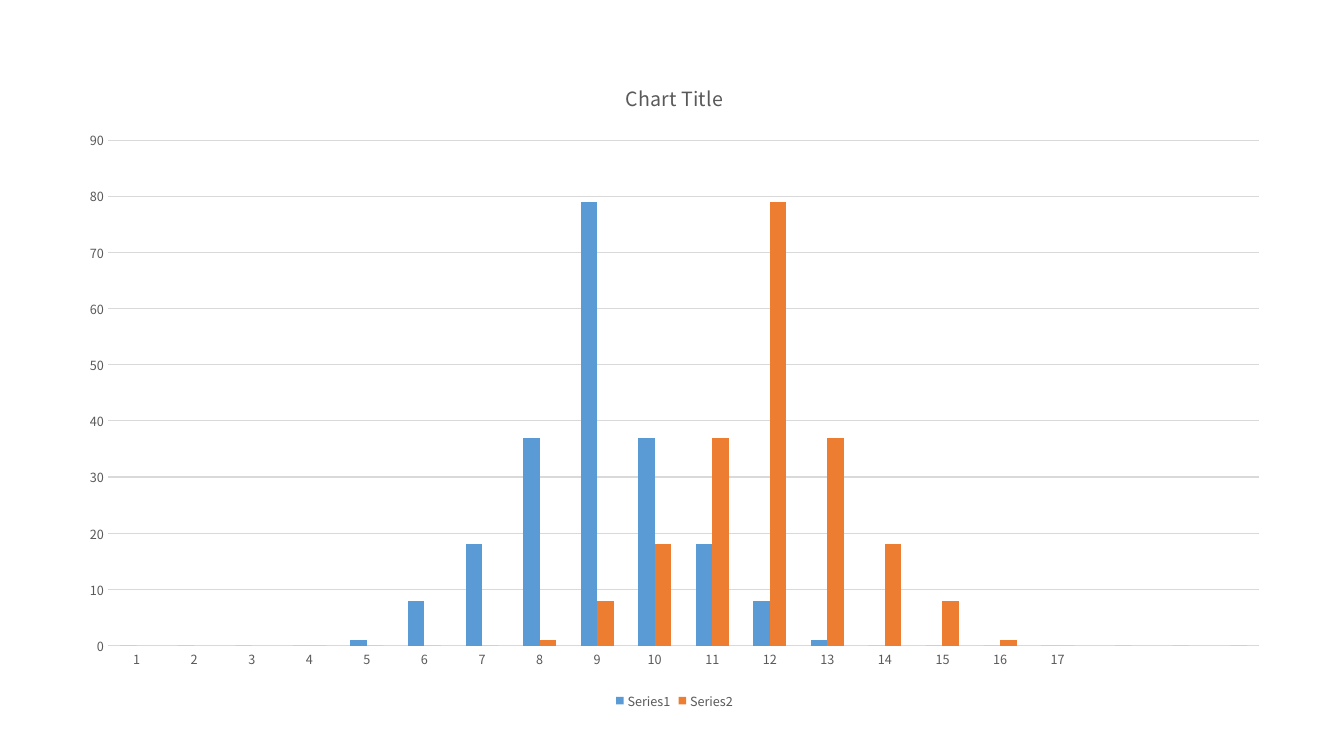
from dataclasses import dataclass

from pptx import Presentation
from pptx.chart.chart import Chart
from pptx.chart.data import CategoryChartData
from pptx.dml.color import RGBColor
from pptx.enum.chart import XL_CHART_TYPE, XL_LEGEND_POSITION, XL_TICK_MARK
from pptx.text.text import Font
from pptx.util import Inches, Pt

BLUE = RGBColor(0x5B, 0x9B, 0xD5)
ORANGE = RGBColor(0xED, 0x7D, 0x31)
TEXT_GRAY = RGBColor(0x59, 0x59, 0x59)
GRID_GRAY = RGBColor(0xD9, 0xD9, 0xD9)
FONT_NAME = "Noto Sans CJK JP"
BELL = (0, 0, 0, 0, 1, 8, 18, 37, 79, 37, 18, 8, 1, 0, 0, 0, 0)
CATEGORY_COUNT = 20


@dataclass(frozen=True)
class BarSeries:
    name: str
    color: RGBColor
    shift: int

    def values(self) -> list[int | None]:
        trailing = CATEGORY_COUNT - len(BELL) - self.shift
        return [None] * self.shift + list(BELL[:]) + [None] * trailing


BAR_SERIES = (BarSeries("Series1", BLUE, 0), BarSeries("Series2", ORANGE, 3))


def format_font(font: Font, *, size: float = 9, color: RGBColor = TEXT_GRAY) -> None:
    font.name = FONT_NAME
    font.size = Pt(size)
    font.bold = False
    font.color.rgb = color


def add_title(chart: Chart, text: str, *, size: float) -> None:
    chart.has_title = True
    chart.chart_title.include_in_layout = False
    para = chart.chart_title.text_frame.paragraphs[0]
    span = para.add_run()
    span.text = text
    format_font(span.font, size=size)


def build_chart_data() -> CategoryChartData:
    chart_data = CategoryChartData()
    chart_data.categories = [
        str(number) if number <= len(BELL) else ""
        for number in range(1, CATEGORY_COUNT + 1)
    ]
    for series in BAR_SERIES:
        chart_data.add_series(series.name, series.values())
    return chart_data


def format_axes(chart: Chart) -> None:
    for axis in (chart.category_axis, chart.value_axis):
        axis.major_tick_mark = XL_TICK_MARK.NONE
        axis.minor_tick_mark = XL_TICK_MARK.NONE
        axis.format.line.fill.background()
        format_font(axis.tick_labels.font)
    value_axis = chart.value_axis
    value_axis.minimum_scale = 0
    value_axis.maximum_scale = 90
    value_axis.major_unit = 10
    value_axis.has_major_gridlines = True
    grid_line = value_axis.major_gridlines.format.line
    grid_line.color.rgb = GRID_GRAY
    grid_line.width = Pt(0.75)


def format_bars(chart: Chart) -> None:
    plot = chart.plots[0]
    plot.gap_width = 150
    plot.overlap = 0
    plot.vary_by_categories = False
    for bars, series in zip(plot.series, BAR_SERIES):
        bars.format.fill.solid()
        bars.format.fill.fore_color.rgb = series.color
        bars.invert_if_negative = False


def main() -> None:
    deck = Presentation()
    deck.slide_width = Inches(13.33)
    deck.slide_height = Inches(7.5)
    page = deck.slides.add_slide(deck.slide_layouts[6])
    frame = page.shapes.add_chart(
        XL_CHART_TYPE.COLUMN_CLUSTERED,
        Inches(0.65), Inches(0.59), Inches(12.08), Inches(6.49),
        build_chart_data(),
    )
    chart = frame.chart
    format_font(chart.font, size=10, color=RGBColor(0, 0, 0))
    add_title(chart, "Chart Title", size=14)
    format_axes(chart)
    format_bars(chart)
    chart.has_legend = True
    chart.legend.position = XL_LEGEND_POSITION.BOTTOM
    chart.legend.include_in_layout = False
    format_font(chart.legend.font)
    deck.save("out.pptx")


if __name__ == "__main__":
    main()
